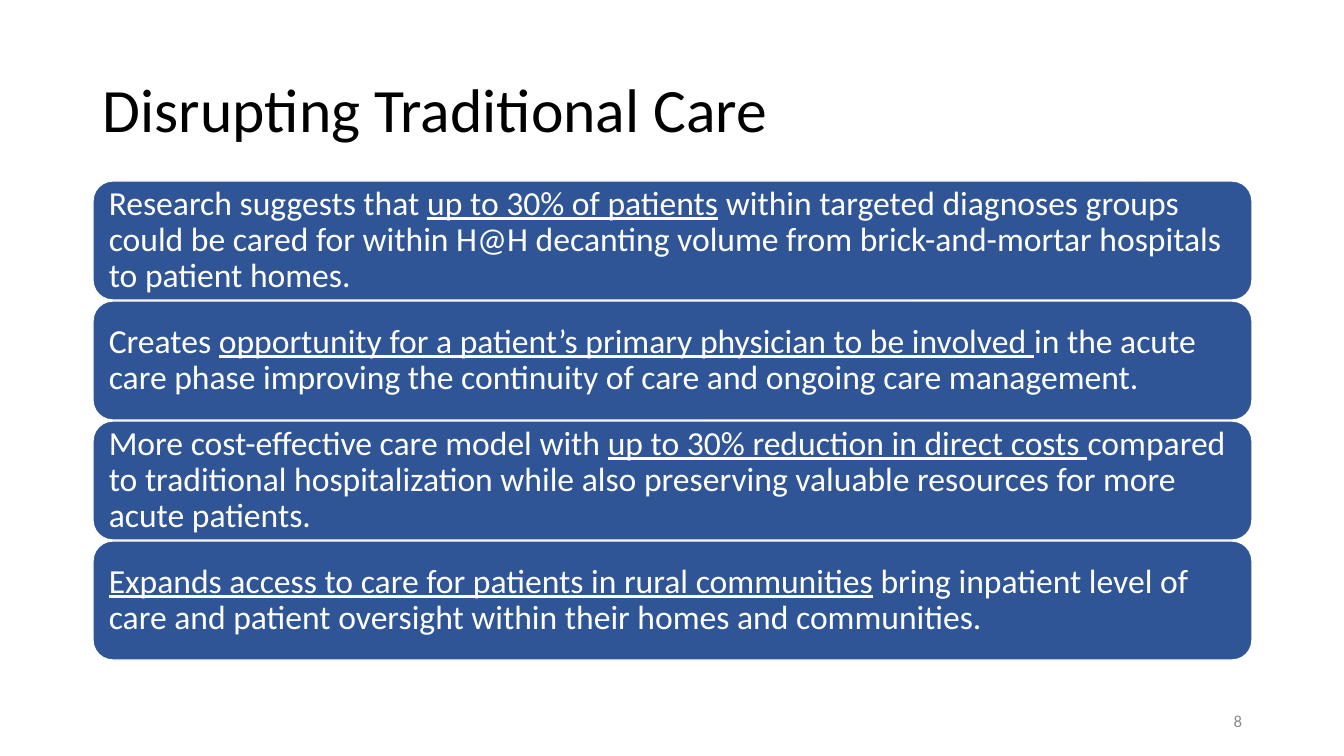
from dataclasses import dataclass

from pptx import Presentation, util as u
from pptx.dml.color import RGBColor
from pptx.enum import shapes, text

TITLE = "Disrupting Traditional Care"
PAGE_NUMBER = "8"
# Each statement is a list of (words, underlined) spans.
STATEMENTS = [
    [("Research suggests that ", False),
     ("up to 30% of patients", True),
     (" within targeted diagnoses groups could be cared for within H@H decanting "
      "volume from brick-and-mortar hospitals to patient homes.", False)],
    [("Creates ", False),
     ("opportunity for a patient’s primary physician to be involved ", True),
     ("in the acute care phase improving the continuity of care and ongoing "
      "care management.", False)],
    [("More cost-effective care model with ", False),
     ("up to 30% reduction in direct costs ", True),
     ("compared to traditional hospitalization while also preserving valuable "
      "resources for more acute patients.", False)],
    [("Expands access to care for patients in rural communities", True),
     (" bring inpatient level of care and patient oversight within their homes "
      "and communities.", False)],
]


@dataclass(frozen=True)
class Theme:
    font: str = "Calibri"
    ink: str = "000000"
    paper: str = "FFFFFF"
    bar: str = "2F5597"
    muted: str = "8C8C8C"
    title_size: int = 44
    body_size: int = 24
    number_size: int = 12


THEME = Theme()
PX_PER_INCH = 100.8
PAGE_WIDTH, PAGE_HEIGHT = 1344, 756
LEFT, WIDTH = 93, 1159
BAR_TOP, BAR_HEIGHT, BAR_PITCH, BAR_INSET = 181, 119, 120, 10


def px(length):
    return u.Inches(length / PX_PER_INCH)


def color(code):
    return RGBColor.from_string(code)


def write(box, spans, size, ink, align=text.PP_ALIGN.LEFT, spacing=0.9):
    frame = box.text_frame
    frame.word_wrap = True
    frame.vertical_anchor = text.MSO_ANCHOR.MIDDLE
    para = frame.paragraphs[0]
    para.alignment = align
    para.line_spacing = spacing
    for words, underlined in spans:
        span = para.add_run()
        span.text = words
        span.font.name = THEME.font
        span.font.size = u.Pt(size)
        span.font.color.rgb = color(ink)
        span.font.underline = underlined


def add_label(page, bounds, words, size, ink, **layout):
    box = page.shapes.add_textbox(*map(px, bounds))
    write(box, [(words, False)], size, ink, **layout)


def add_bar(page, top, spans):
    bar = page.shapes.add_shape(shapes.MSO_SHAPE.ROUNDED_RECTANGLE,
                                *map(px, (LEFT, top, WIDTH, BAR_HEIGHT)))
    bar.shadow.inherit = False
    bar.fill.solid()
    bar.fill.fore_color.rgb = color(THEME.bar)
    bar.line.color.rgb = color(THEME.paper)
    bar.line.width = u.Pt(1)
    frame = bar.text_frame
    frame.margin_left = frame.margin_right = px(BAR_INSET)
    frame.margin_top = frame.margin_bottom = 0
    write(bar, spans, THEME.body_size, THEME.paper)


def main():
    deck = Presentation()
    deck.slide_width, deck.slide_height = px(PAGE_WIDTH), px(PAGE_HEIGHT)
    page = deck.slides.add_slide(deck.slide_layouts[6])
    add_label(page, (LEFT, 40, WIDTH, 146), TITLE, THEME.title_size, THEME.ink)
    for row, spans in enumerate(STATEMENTS):
        add_bar(page, BAR_TOP + row * BAR_PITCH, spans)
    add_label(page, (950, 701, 302, 40), PAGE_NUMBER, THEME.number_size,
              THEME.muted, align=text.PP_ALIGN.RIGHT, spacing=1.0)
    deck.save("out.pptx")


if __name__ == "__main__":
    main()
